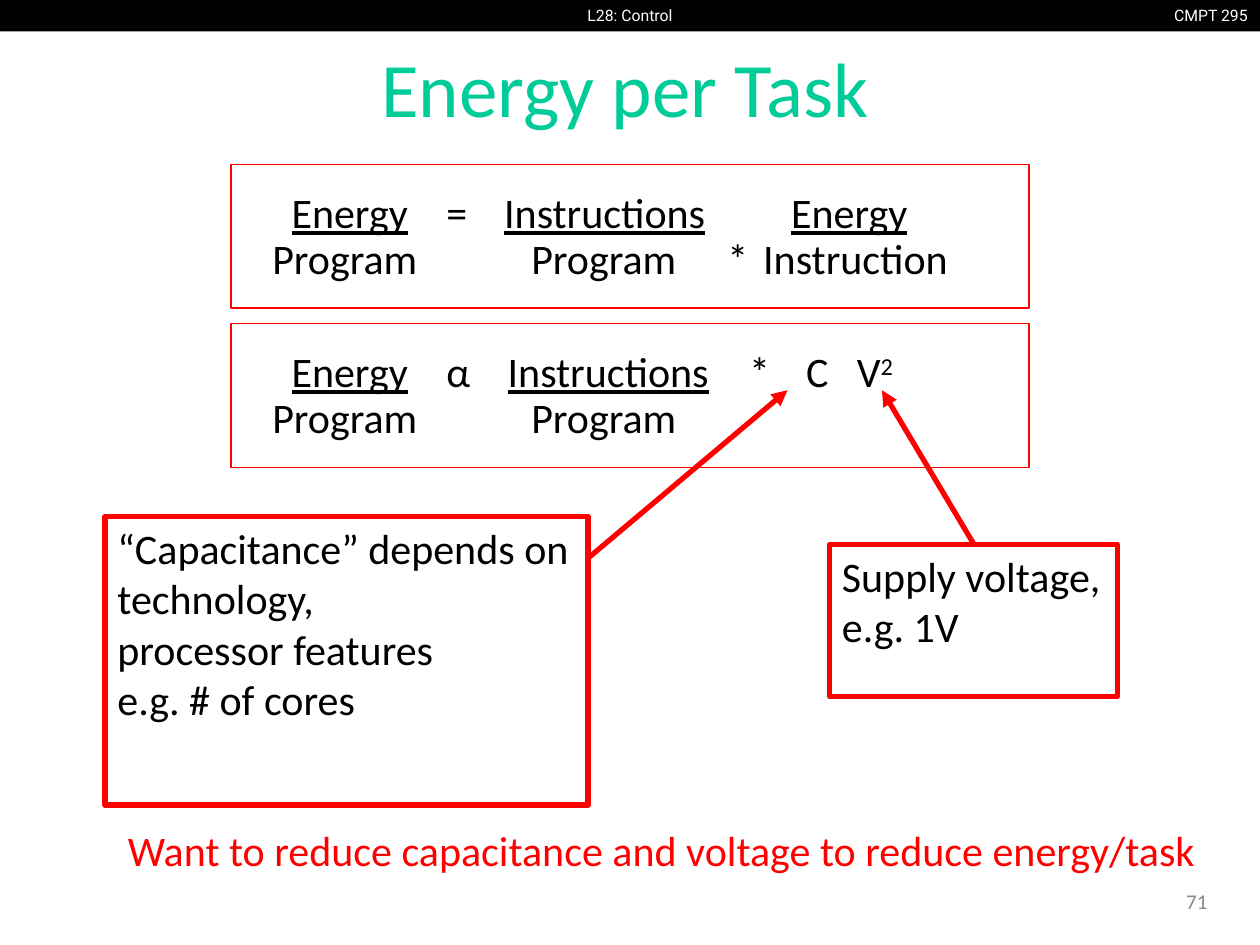
"""Build the "Energy per Task" slide."""
from typing import NamedTuple, Optional

from lxml import etree
from pptx import Presentation
from pptx.dml.color import RGBColor
from pptx.enum.shapes import MSO_CONNECTOR, MSO_SHAPE
from pptx.enum.text import MSO_ANCHOR, PP_ALIGN
from pptx.oxml.ns import qn
from pptx.util import Pt

LEFT, CENTER, RIGHT = PP_ALIGN.LEFT, PP_ALIGN.CENTER, PP_ALIGN.RIGHT
TOP, MIDDLE = MSO_ANCHOR.TOP, MSO_ANCHOR.MIDDLE
RECTANGLE, STRAIGHT = MSO_SHAPE.RECTANGLE, MSO_CONNECTOR.STRAIGHT
COLORS = {
    "black": "000000",
    "white": "FFFFFF",
    "title": "00CC99",
    "red": "FF0000",
    "gray": "888888",
}


class Area(NamedTuple):
    left: float
    top: float
    width: float
    height: float


class Label(NamedTuple):
    area: Area
    text: str
    size: float = 24
    color: str = "black"
    font: str = "Calibri"
    align: PP_ALIGN = LEFT
    anchor: MSO_ANCHOR = TOP
    wrap: bool = True
    line_spacing: Optional[float] = None


class Piece(NamedTuple):
    text: str
    underline: bool = False
    superscript: bool = False


class Row(NamedTuple):
    tab_stops: tuple
    pieces: tuple


class Equation(NamedTuple):
    area: Area
    numerators: Row
    denominators: Row


class Callout(NamedTuple):
    label: Label
    arrow_start: tuple
    arrow_end: tuple


LABELS = (
    Label(Area(661.5, 0, 58.5, 18), "CMPT 295", 9, "white", "Roboto", RIGHT, wrap=False),
    Label(Area(320, 0, 80, 18), "L28: Control", 9, "white", "Roboto", CENTER, wrap=False),
    Label(Area(17.5, 11.5, 679.5, 83), "Energy per Task", 44, "title",
          align=CENTER, anchor=MIDDLE, line_spacing=0.9),
    Label(Area(535, 500.5, 162, 28.5), "71", 12, "gray", align=RIGHT, anchor=MIDDLE),
    Label(Area(66, 467.5, 634.5, 48),
          "Want to reduce capacitance and voltage to reduce energy/task", color="red"),
)

FRACTION_STOPS = (16.5, 27.5, 104.5, 116)
ENERGY = Piece("\tEnergy\t", underline=True)
INSTRUCTIONS = Piece("Instructions", underline=True)
EQUATIONS = (
    Equation(
        Area(132, 94, 456, 82),
        Row(FRACTION_STOPS + (149, 297, 313, 401),
            (Piece("\t"), ENERGY, Piece("\t=\t"), INSTRUCTIONS, Piece("\t"), ENERGY)),
        Row((16.5, 164.5, 276.5, 297), (Piece("\tProgram\tProgram\t*\tInstruction"),)),
    ),
    Equation(
        Area(132, 185, 456, 82),
        Row(FRACTION_STOPS + (151, 289, 321.5, 350.5),
            (Piece("\t"), ENERGY, Piece("\tα\t"), INSTRUCTIONS, Piece("\t*\tC\tV"),
             Piece("2", superscript=True))),
        Row((16.5, 164.5), (Piece("\tProgram\tProgram"),)),
    ),
)

CALLOUTS = (
    Callout(
        Label(Area(60, 295, 276, 165),
              "“Capacitance” depends on\ntechnology,\nprocessor features\ne.g. # of cores"),
        (336, 319), (450, 223),
    ),
    Callout(
        Label(Area(474, 311, 164.5, 87), "Supply voltage,\ne.g. 1V"),
        (556.5, 311), (504, 223),
    ),
)


def rgb(name: str) -> RGBColor:
    """Look up a named colour."""
    return RGBColor.from_string(COLORS[name])


def style_font(paragraph, size: float, color: str, font: str = "Calibri") -> None:
    """Set the font that all runs of a paragraph share."""
    paragraph.font.size = Pt(size)
    paragraph.font.name = font
    paragraph.font.color.rgb = rgb(color)


def write_label(shape, label: Label) -> None:
    """Fill a shape with one paragraph for each line of a label."""
    frame = shape.text_frame
    frame.word_wrap = label.wrap
    frame.vertical_anchor = label.anchor
    frame.text = label.text
    for paragraph in frame.paragraphs:
        paragraph.alignment = label.align
        if label.line_spacing:
            paragraph.line_spacing = label.line_spacing
        style_font(paragraph, label.size, label.color, label.font)


def add_label(slide, label: Label) -> None:
    """Add a text box."""
    write_label(slide.shapes.add_textbox(*map(Pt, label.area)), label)


def add_frame(slide, area: Area, line_width: float):
    """Add an unfilled rectangle with a red outline."""
    shape = slide.shapes.add_shape(RECTANGLE, *map(Pt, area))
    shape.shadow.inherit = False
    shape.fill.background()
    shape.line.color.rgb = rgb("red")
    shape.line.width = Pt(line_width)
    return shape


def write_row(paragraph, row: Row, line_spacing: float) -> None:
    """Write one line of an equation on its tab stops."""
    properties = paragraph._p.get_or_add_pPr()
    tab_list = etree.SubElement(properties, qn("a:tabLst"))
    for position in row.tab_stops:
        etree.SubElement(tab_list, qn("a:tab"), pos=str(int(Pt(position))), algn="l")
    paragraph.alignment = LEFT
    paragraph.line_spacing = line_spacing
    style_font(paragraph, 24, "black")
    for piece in row.pieces:
        run = paragraph.add_run()
        run.text = piece.text
        if piece.underline:
            run.font.underline = True
        if piece.superscript:
            run._r.get_or_add_rPr().set("baseline", "30000")


def add_equation(slide, equation: Equation) -> None:
    """Add a framed equation of fractions."""
    frame = add_frame(slide, equation.area, 0.75).text_frame
    frame.word_wrap = True
    frame.vertical_anchor = MIDDLE
    write_row(frame.paragraphs[0], equation.numerators, 0.9)
    denominators = frame.add_paragraph()
    write_row(denominators, equation.denominators, 0.6)
    denominators.space_before = Pt(7.2)


def add_callout(slide, callout: Callout) -> None:
    """Add a framed note and the arrow from it to its factor."""
    write_label(add_frame(slide, callout.label.area, 3), callout.label)
    arrow = slide.shapes.add_connector(
        STRAIGHT, *map(Pt, callout.arrow_start + callout.arrow_end))
    arrow.line.color.rgb = rgb("red")
    arrow.line.width = Pt(3)
    etree.SubElement(arrow.line._get_or_add_ln(), qn("a:tailEnd"), type="triangle")
    etree.SubElement(arrow._element.spPr, qn("a:effectLst"))


def main() -> None:
    """Build and save the presentation."""
    presentation = Presentation()
    presentation.slide_width, presentation.slide_height = Pt(720), Pt(540)
    slide = presentation.slides.add_slide(presentation.slide_layouts[6])
    header = slide.shapes.add_shape(RECTANGLE, 0, 0, Pt(720), Pt(18))
    header.shadow.inherit = False
    header.fill.solid()
    header.fill.fore_color.rgb = rgb("black")
    header.line.fill.background()
    for label in LABELS:
        add_label(slide, label)
    for equation in EQUATIONS:
        add_equation(slide, equation)
    for callout in CALLOUTS:
        add_callout(slide, callout)
    presentation.save("out.pptx")


if __name__ == "__main__":
    main()
